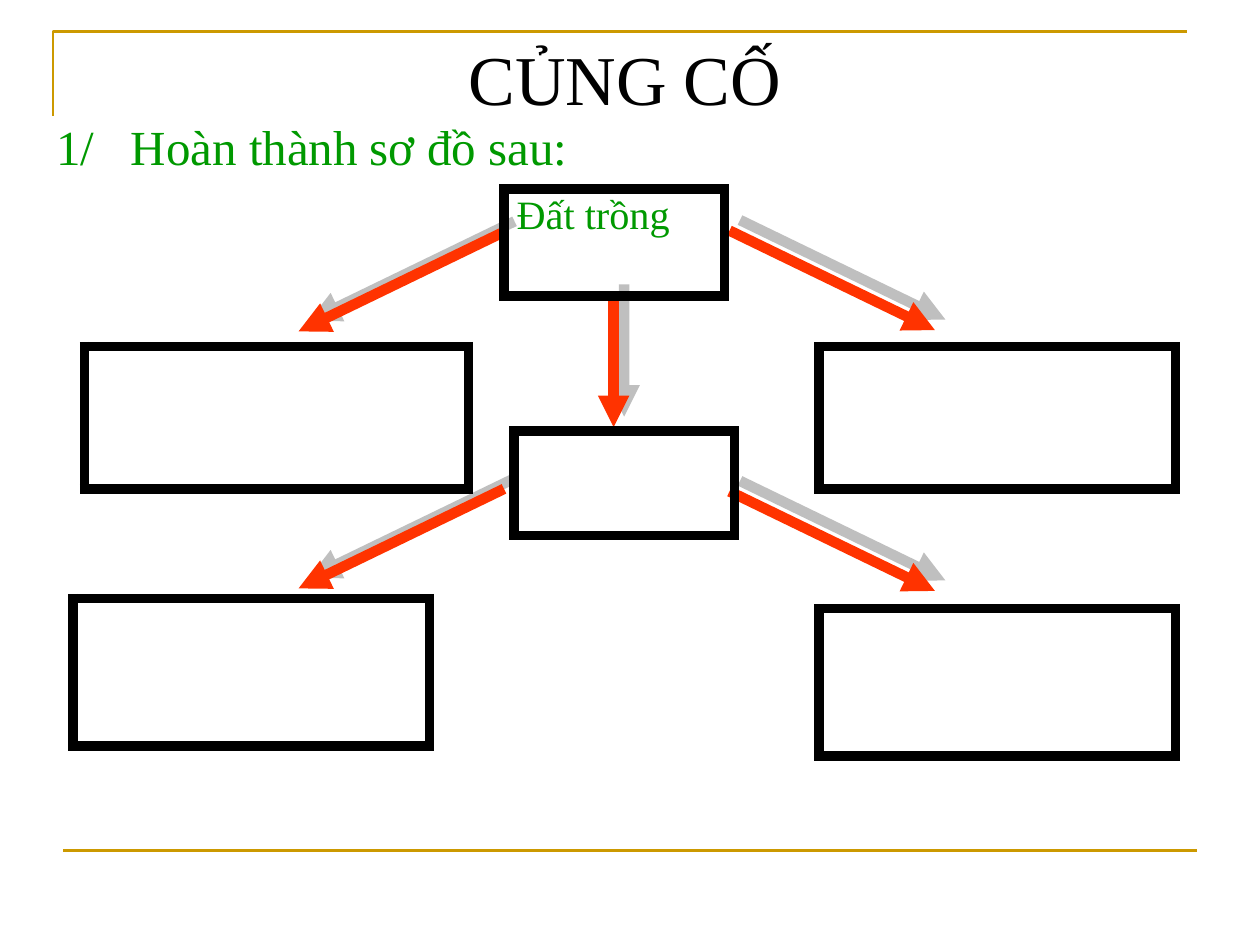
from lxml import etree
from pptx import Presentation
from pptx import util as u
from pptx.dml.color import RGBColor
from pptx.enum import shapes, text
from pptx.oxml import parse_xml
from pptx.oxml.ns import nsdecls, qn

COLORS = {"gold": "CC9900", "green": "009900", "arrow": "FF3300",
          "shadow": "808080", "black": "000000"}
FONT = "Times New Roman"


def write(frame, content, size, color, align=text.PP_ALIGN.LEFT):
    paragraph = frame.paragraphs[0]
    paragraph.alignment = align
    run = paragraph.add_run()
    run.text = content
    run.font.size = u.Pt(size)
    run.font.name = FONT
    run.font.color.rgb = RGBColor.from_string(COLORS[color])
    return paragraph


def add_line(start, end, color, width):
    """Add a straight connector without the theme's shadow."""
    line = slide.shapes.add_connector(
        shapes.MSO_CONNECTOR.STRAIGHT, *(u.Inches(value) for value in start + end))
    line.line.color.rgb = RGBColor.from_string(COLORS[color])
    line.line.width = u.Pt(width)
    effects = etree.SubElement(line._element.spPr, qn("a:effectLst"))
    return line, effects


presentation = Presentation()
presentation.slide_width = u.Inches(10)
presentation.slide_height = u.Inches(7.5)
slide = presentation.slides.add_slide(presentation.slide_layouts[6])

# Frame: corner at the top, rule at the bottom
builder = slide.shapes.build_freeform(u.Inches(0.42), u.Inches(0.92), scale=1.0)
builder.add_line_segments(
    [(u.Inches(0.42), u.Inches(0.25)), (u.Inches(9.42), u.Inches(0.25))], close=False)
corner = builder.convert_to_shape()
corner.shadow.inherit = False
corner.fill.background()
corner.line.color.rgb = RGBColor.from_string(COLORS["gold"])
corner.line.width = u.Pt(1.5)
add_line((0.5, 6.75), (9.5, 6.75), "gold", 1.5)

# Question, with the wording on a tab stop after its number
question = slide.shapes.add_textbox(
    u.Inches(0.35), u.Inches(0.82), u.Inches(4.89), u.Inches(0.68))
question.text_frame.word_wrap = True
question.text_frame.vertical_anchor = text.MSO_ANCHOR.MIDDLE
paragraph = write(question.text_frame, "1/\tHoàn thành sơ đồ sau:", 28, "green")
tabs = etree.SubElement(paragraph._p.get_or_add_pPr(), qn("a:tabLst"))
etree.SubElement(tabs, qn("a:tab"), pos=str(u.Inches(0.59)), algn="l")

# Arrows of the diagram
arrows = [
    ((4.87, 2.34), (4.87, 3.39)),
    ((5.79, 1.83), (7.42, 2.62)),
    ((4, 3.88), (2.37, 4.67)),
    ((4, 1.84), (2.37, 2.63)),
    ((5.79, 3.9), (7.42, 4.69)),
]
for start, end in arrows:
    arrow, effects = add_line(start, end, "arrow", 6)
    etree.SubElement(arrow.line._get_or_add_ln(), qn("a:tailEnd"), type="triangle")
    effects.append(parse_xml(
        f'<a:outerShdw {nsdecls("a")} blurRad="0" dist="{u.Pt(8.5)}" dir="{315 * 60000}"'
        f' algn="ctr" rotWithShape="0"><a:srgbClr val="{COLORS["shadow"]}">'
        '<a:alpha val="50000"/></a:srgbClr></a:outerShdw>'))

# Boxes of the diagram: one-cell tables with thick borders
boxes = [
    (0.67, 2.75, 3.05, 1.13, ""),
    (4, 1.5, 1.75, 0.85, "Đất trồng"),
    (0.58, 4.75, 2.83, 1.17, ""),
    (4.08, 3.42, 1.75, 0.83, ""),
    (6.5, 2.75, 2.83, 1.13, ""),
    (6.5, 4.83, 2.83, 1.17, ""),
]
for left, top, width, height, label in boxes:
    table = slide.shapes.add_table(
        1, 1, u.Inches(left), u.Inches(top), u.Inches(width), u.Inches(height)).table
    table.first_row = table.horz_banding = False
    cell = table.cell(0, 0)
    cell.margin_left = cell.margin_right = u.Inches(0.1)
    cell.margin_top = cell.margin_bottom = u.Inches(0.04)
    cell.fill.background()
    for index, side in enumerate(("lnL", "lnR", "lnT", "lnB")):
        cell._tc.get_or_add_tcPr().insert(index, parse_xml(
            f'<a:{side} {nsdecls("a")} w="{u.Pt(6)}"><a:solidFill>'
            f'<a:srgbClr val="{COLORS["black"]}"/></a:solidFill></a:{side}>'))
    if label:
        write(cell.text_frame, label, 23, "green")

heading = slide.shapes.add_textbox(
    u.Inches(3.58), u.Inches(0.18), u.Inches(2.76), u.Inches(0.77))
heading.text_frame.word_wrap = True
heading.text_frame.margin_top = u.Inches(0.1)
heading.text_frame.margin_bottom = 0
write(heading.text_frame, "CỦNG CỐ", 40, "black", text.PP_ALIGN.CENTER)

presentation.save("out.pptx")
